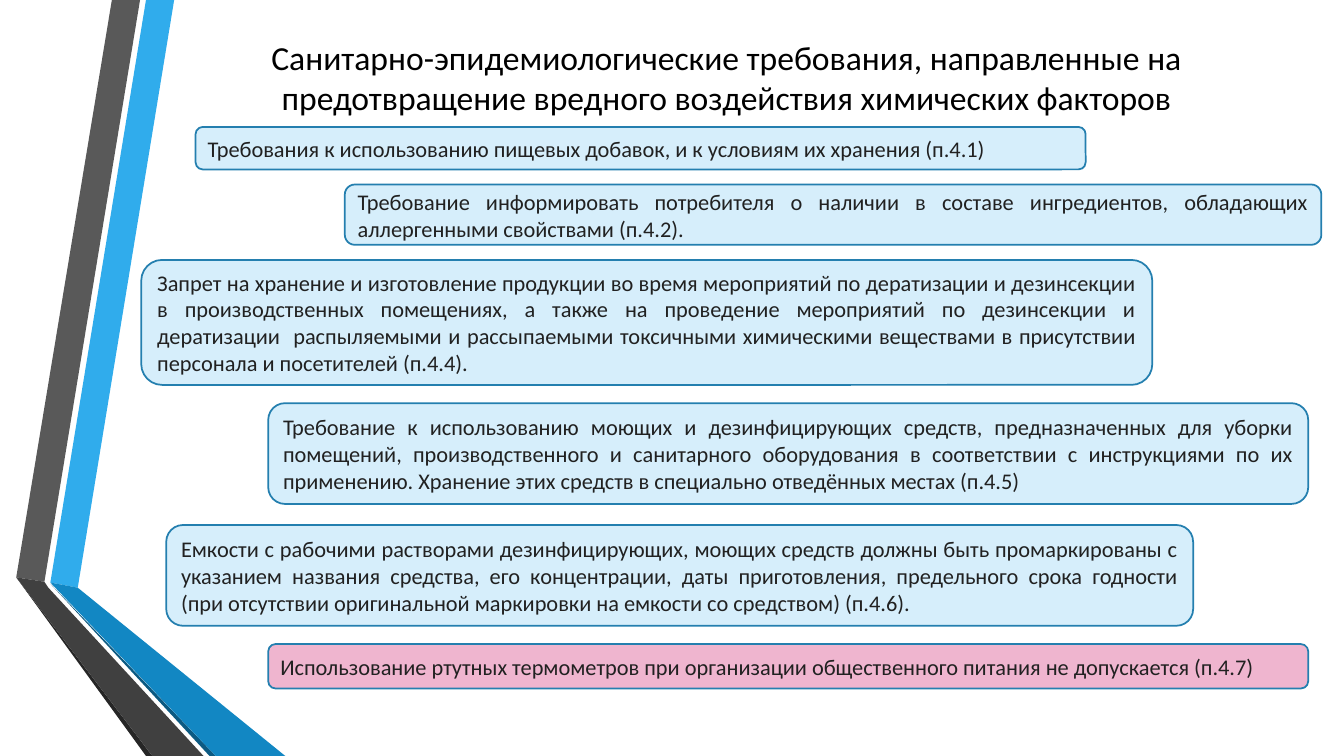
from dataclasses import dataclass

from pptx import Presentation
from pptx.dml.color import RGBColor
from pptx.enum.shapes import MSO_SHAPE
from pptx.enum.text import MSO_ANCHOR, MSO_AUTO_SIZE, PP_ALIGN
from pptx.shapes.autoshape import Shape
from pptx.slide import Slide
from pptx.util import Cm, Pt

FONT = "Calibri"
BLACK = RGBColor(0x00, 0x00, 0x00)
INK = RGBColor(0x21, 0x21, 0x21)
EDGE = RGBColor(0x24, 0x7F, 0xAF)
PALE = RGBColor(0xD6, 0xEE, 0xFB)
PINK = RGBColor(0xEF, 0xB5, 0xCF)
SKY = RGBColor(0x30, 0xAC, 0xEC)
BLUE = RGBColor(0x12, 0x87, 0xC3)
NAVY = RGBColor(0x0C, 0x5A, 0x82)
GREY = RGBColor(0x59, 0x59, 0x59)
COAL = RGBColor(0x40, 0x40, 0x40)
DARK = RGBColor(0x26, 0x26, 0x26)

WIDTH, HEIGHT = 33.87, 19.05
TITLE = ("Санитарно-эпидемиологические требования, направленные на "
         "предотвращение вредного воздействия химических факторов")


@dataclass(frozen=True)
class Band:
    """A filled polygon of the ribbon, with points in centimetres."""
    fill: RGBColor
    points: tuple[tuple[float, float], ...]


@dataclass(frozen=True)
class Rule:
    """A rounded box holding one requirement, in centimetres."""
    left: float
    top: float
    width: float
    height: float
    text: str
    fill: RGBColor = PALE


BANDS = (
    Band(SKY, ((1.27, 14.68), (1.96, 14.81), (4.39, 0), (3.68, 0))),
    Band(GREY, ((3.53, 0), (2.82, 0), (0.41, 14.55), (1.12, 14.66))),
    Band(DARK, ((0.41, 14.55), (3.68, HEIGHT), (3.84, HEIGHT))),
    Band(NAVY, ((1.27, 14.71), (5.28, HEIGHT), (5.44, HEIGHT))),
    Band(BLUE, ((1.27, 14.68), (5.44, HEIGHT), (7.19, HEIGHT), (1.96, 14.81))),
    Band(COAL, ((5.13, HEIGHT), (1.22, 14.81), (1.12, 14.66), (0.41, 14.55),
                (3.84, HEIGHT))),
)

RULES = (
    Rule(4.93, 3.2, 22.43, 1.07,
         "Требования к использованию пищевых добавок, и к условиям их хранения (п.4.1)"),
    Rule(8.69, 4.65, 24.61, 1.52,
         "Требование информировать потребителя о наличии в составе ингредиентов, "
         "обладающих аллергенными свойствами (п.4.2)."),
    Rule(3.56, 6.55, 25.48, 3.15,
         "Запрет на хранение и изготовление продукции во время мероприятий по "
         "дератизации и дезинсекции в производственных помещениях, а также на "
         "проведение мероприятий по дезинсекции и дератизации  распыляемыми и "
         "рассыпаемыми токсичными химическими веществами в присутствии персонала "
         "и посетителей (п.4.4)."),
    Rule(6.76, 10.16, 26.21, 2.54,
         "Требование к использованию моющих и дезинфицирующих средств, "
         "предназначенных для уборки помещений, производственного и санитарного "
         "оборудования в соответствии с инструкциями по их применению. Хранение "
         "этих средств в специально отведённых местах (п.4.5)"),
    Rule(4.19, 13.23, 25.88, 2.54,
         "Емкости с рабочими растворами дезинфицирующих, моющих средств должны "
         "быть промаркированы с указанием названия средства, его концентрации, "
         "даты приготовления, предельного срока годности (при отсутствии "
         "оригинальной маркировки на емкости со средством) (п.4.6)."),
    Rule(6.76, 16.23, 26.21, 1.12,
         "Использование ртутных термометров при организации общественного питания "
         "не допускается (п.4.7)", PINK),
)


def write(shape: Shape, text: str, size: int, color: RGBColor, align: PP_ALIGN) -> None:
    """Put one formatted paragraph into a shape."""
    frame = shape.text_frame
    frame.text = text
    frame.word_wrap = True
    frame.auto_size = MSO_AUTO_SIZE.NONE
    frame.vertical_anchor = MSO_ANCHOR.MIDDLE
    para = frame.paragraphs[0]
    para.alignment = align
    font = para.runs[0].font
    font.name, font.size = FONT, Pt(size)
    font.color.rgb = color


def paint(shape: Shape, fill: RGBColor) -> None:
    """Give a shape a plain fill and no shadow."""
    shape.shadow.inherit = False
    shape.fill.solid()
    shape.fill.fore_color.rgb = fill


def draw_band(slide: Slide, band: Band) -> None:
    """Draw one polygon of the ribbon."""
    first, *rest = [(Cm(x), Cm(y)) for x, y in band.points]
    path = slide.shapes.build_freeform(*first)
    path.add_line_segments(rest, close=True)
    shape = path.convert_to_shape()
    paint(shape, band.fill)
    shape.line.fill.background()


def draw_rule(slide: Slide, rule: Rule) -> None:
    """Draw one requirement box."""
    shape = slide.shapes.add_shape(
        MSO_SHAPE.ROUNDED_RECTANGLE,
        Cm(rule.left), Cm(rule.top), Cm(rule.width), Cm(rule.height))
    paint(shape, rule.fill)
    shape.line.color.rgb = EDGE
    shape.line.width = Pt(1.25)
    write(shape, rule.text, 16, INK, PP_ALIGN.JUSTIFY)


def main() -> None:
    """Build the slide and save it."""
    deck = Presentation()
    deck.slide_width, deck.slide_height = Cm(WIDTH), Cm(HEIGHT)
    slide = deck.slides.add_slide(deck.slide_layouts.get_by_name("Title Only"))
    for band in BANDS:
        draw_band(slide, band)
    title = slide.shapes.title
    title.left, title.top = Cm(4.39), Cm(0.89)
    title.width, title.height = Cm(27.84), Cm(2.11)
    write(title, TITLE, 24, BLACK, PP_ALIGN.CENTER)
    for rule in RULES:
        draw_rule(slide, rule)
    deck.save("out.pptx")


if __name__ == "__main__":
    main()
